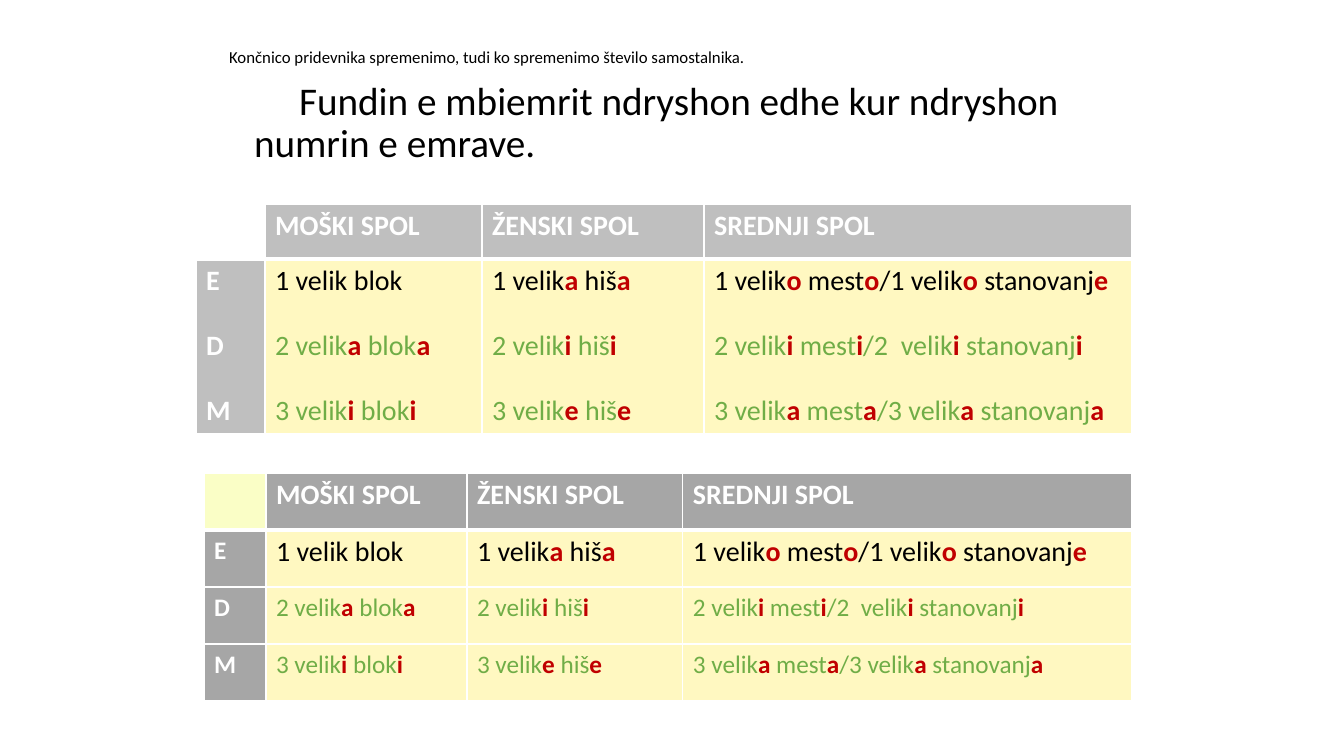
from lxml.etree import SubElement
from pptx import Presentation
from pptx.dml.color import RGBColor
from pptx.enum.text import MSO_ANCHOR as Anchor, MSO_AUTO_SIZE as AutoSize, PP_ALIGN as Align
from pptx.oxml import parse_xml
from pptx.oxml.ns import nsdecls, qn
from pptx.util import Pt

PX = 914400 / 100.8
FONT = "Calibri"
COLORS = {
    "black": "000000", "white": "FFFFFF", "green": "70AD47", "ending": "C00000",
    "yellow": "FFF8C1", "corner": "FAFEC6", "light_gray": "BFBFBF", "gray": "A6A6A6",
}
GENDERS = ["MOŠKI SPOL", "ŽENSKI SPOL", "SREDNJI SPOL"]
NUMBERS = ["E", "D", "M"]
# Endings stand between asterisks; one row per number, one column per gender.
PHRASES = [
    ["1 velik blok", "1 velik*a* hiš*a*", "1 velik*o* mest*o*/1 velik*o* stanovanj*e*"],
    ["2 velik*a* blok*a*", "2 velik*i* hiš*i*", "2 velik*i* mest*i*/2  velik*i* stanovanj*i*"],
    ["3 velik*i* blok*i*", "3 velik*e* hiš*e*", "3 velik*a* mest*a*/3 velik*a* stanovanj*a*"],
]
NUMBER_COLORS = ["black", "green", "green"]


def px(length):
    return round(length * PX)


def rgb(name):
    return RGBColor.from_string(COLORS[name])


def add_run(paragraph, text, size, color, bold=False):
    run = paragraph.add_run()
    run.text = text
    run.font.name, run.font.size, run.font.bold = FONT, Pt(size), bold
    run.font.color.rgb = rgb(color)


def add_phrase(paragraph, phrase, size, color):
    """Write a phrase with its endings bold and red."""
    for i, part in enumerate(phrase.split("*")):
        if part:
            is_ending = i % 2 == 1
            add_run(paragraph, part, size, "ending" if is_ending else color, is_ending)


def format_cell(cell, fill, top=1, bottom=1):
    """Fill a cell (None leaves it clear) and give it white borders, in points."""
    if fill:
        cell.fill.solid()
        cell.fill.fore_color.rgb = rgb(fill)
    else:
        cell.fill.background()
    properties = cell._tc.get_or_add_tcPr()
    for i, (side, width) in enumerate([("L", 1), ("R", 1), ("T", top), ("B", bottom)]):
        border = parse_xml(f'<a:ln{side} {nsdecls("a")} w="{Pt(width)}"/>')
        solid = SubElement(border, qn("a:solidFill"))
        SubElement(solid, qn("a:srgbClr"), val=COLORS["white"])
        properties.insert(i, border)


def add_gender_table(slide, box, widths, heights, header_fill, corner_fill):
    """Add a table with its gender header row and return it."""
    table = slide.shapes.add_table(len(heights), len(widths), *map(px, box)).table
    table.horz_banding = False
    for column, width in zip(table.columns, widths):
        column.width = px(width)
    for row, height in zip(table.rows, heights):
        row.height = px(height)
    format_cell(table.cell(0, 0), corner_fill, bottom=3)
    for column, gender in enumerate(GENDERS, 1):
        cell = table.cell(0, column)
        format_cell(cell, header_fill, bottom=3)
        add_run(cell.text_frame.paragraphs[0], gender, 20, "white", True)
    return table


def add_stacked_table(slide, box):
    """All three numbers share one row, a paragraph each."""
    table = add_gender_table(slide, box, [69, 217, 222, 428], [55, 158], "light_gray", None)
    for column in range(len(GENDERS) + 1):
        cell = table.cell(1, column)
        format_cell(cell, "yellow" if column else "light_gray", top=3)
        frame = cell.text_frame
        for i, number in enumerate(NUMBERS):
            paragraph = frame.add_paragraph() if i else frame.paragraphs[0]
            paragraph.space_before = Pt(22 if i else 0)
            if column:
                add_phrase(paragraph, PHRASES[i][column - 1], 20, NUMBER_COLORS[i])
            else:
                add_run(paragraph, number, 20, "white", True)


def add_row_table(slide, box):
    """Each number has a row of its own."""
    table = add_gender_table(slide, box, [62, 201, 216, 449], [57] * 4, "gray", "corner")
    for i, number in enumerate(NUMBERS):
        top = 1 if i else 3
        label = table.cell(i + 1, 0)
        format_cell(label, "gray", top)
        add_run(label.text_frame.paragraphs[0], number, 18, "white", True)
        for column, phrase in enumerate(PHRASES[i], 1):
            cell = table.cell(i + 1, column)
            format_cell(cell, "yellow", top)
            add_phrase(cell.text_frame.paragraphs[0], phrase, 18 if i else 20, NUMBER_COLORS[i])


def place_title(slide, box):
    title = slide.shapes.title
    title.left, title.top, title.width, title.height = map(px, box)
    frame = title.text_frame
    frame.word_wrap, frame.auto_size = True, AutoSize.NONE
    frame.vertical_anchor = Anchor.TOP
    rule = frame.paragraphs[0]
    translation = frame.add_paragraph()
    add_run(rule, "Končnico pridevnika spremenimo, tudi ko spremenimo število samostalnika.", 12, "black")
    add_run(translation, "Fundin e mbiemrit ndryshon edhe kur ndryshon numrin e emrave.", 28, "black")
    for paragraph, indent in [(rule, -25), (translation, 45)]:
        paragraph.alignment = Align.LEFT
        paragraph.line_spacing = 0.9
        paragraph.space_before = Pt(10)
        properties = paragraph._p.get_or_add_pPr()
        properties.set("marL", str(px(25)))
        properties.set("indent", str(px(indent)))


def main():
    deck = Presentation()
    deck.slide_width, deck.slide_height = px(1344), px(756)
    slide = deck.slides.add_slide(deck.slide_layouts[5])
    place_title(slide, (219, 44, 907, 631))
    add_stacked_table(slide, (196, 204, 936, 213))
    add_row_table(slide, (204, 473, 928, 228))
    deck.save("out.pptx")


if __name__ == "__main__":
    main()
